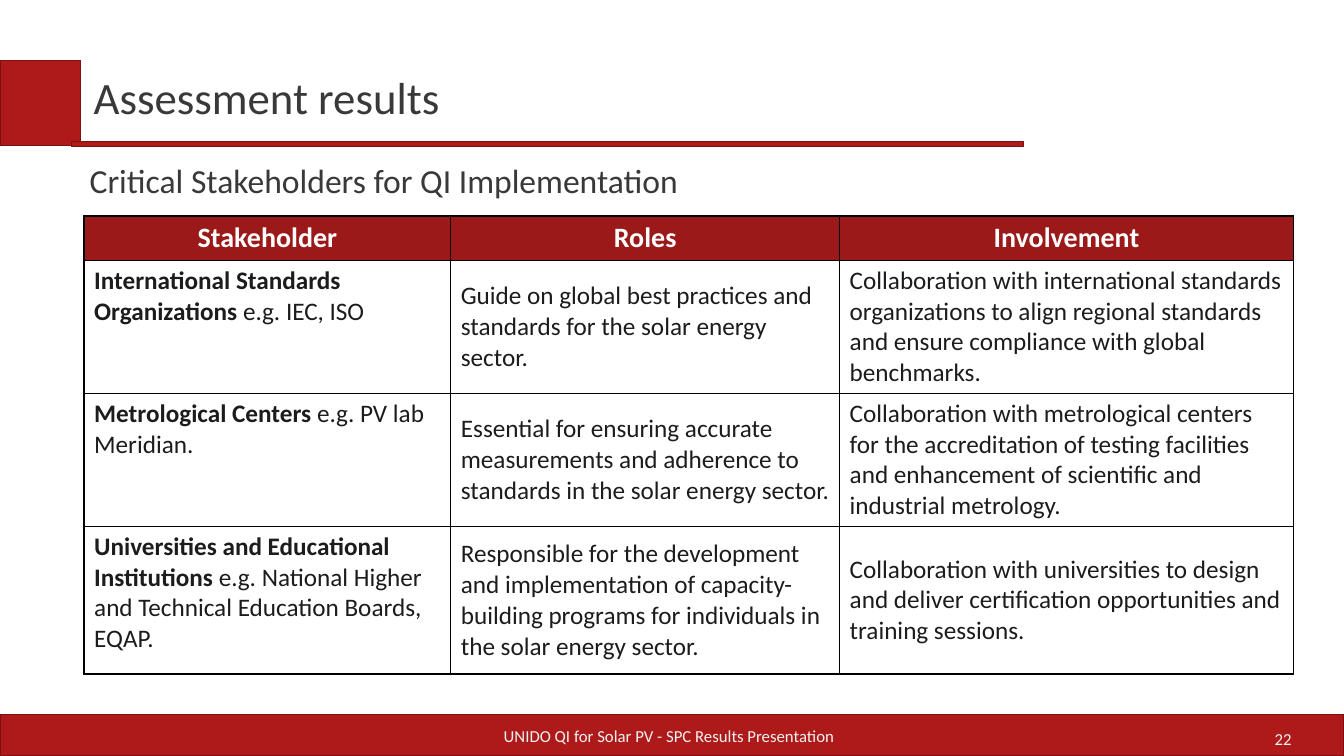
from lxml.etree import SubElement
from pptx import Presentation
from pptx.dml.color import RGBColor
from pptx.enum.shapes import MSO_SHAPE
from pptx.enum.text import MSO_ANCHOR, PP_ALIGN
from pptx.oxml.ns import qn
from pptx.util import Cm, Pt

RED, DARK_RED, HEADER_RED = "AE1919", "7E1212", "9B1919"
INK, GREY, PALE, WHITE, BLACK = "1D1C1C", "3A3838", "F2F2F2", "FFFFFF", "000000"

HEADINGS = ["Stakeholder", "Roles", "Involvement"]
# Stakeholder name, examples, role, involvement
STAKEHOLDERS = [
    ("International Standards Organizations", " e.g. IEC, ISO",
     "Guide on global best practices and standards for the solar energy sector.",
     "Collaboration with international standards organizations to align regional "
     "standards and ensure compliance with global benchmarks."),
    ("Metrological Centers", " e.g. PV lab Meridian.",
     "Essential for ensuring accurate measurements and adherence to standards in "
     "the solar energy sector.",
     "Collaboration with metrological centers for the accreditation of testing "
     "facilities and enhancement of scientific and industrial metrology."),
    ("Universities and Educational Institutions",
     " e.g. National Higher and Technical Education Boards, EQAP.",
     "Responsible for the development and implementation of capacity-building "
     "programs for individuals in the solar energy sector.",
     "Collaboration with universities to design and deliver certification "
     "opportunities and training sessions."),
]
COLUMN_WIDTHS = [9.24, 9.8, 11.43]
ROW_HEIGHTS = [1.12, 3.35, 3.35, 3.73]


def color(value):
    return RGBColor.from_string(value)


class SlideBuilder:
    """Holds the deck's style and the page being drawn; lengths are centimetres."""

    font = "Calibri"

    def __init__(self, page):
        self.page = page

    def style(self, span, size, ink, bold=False):
        span.font.name = self.font
        span.font.size = Pt(size)
        span.font.bold = bold
        span.font.color.rgb = color(ink)

    def bar(self, left, top, width, height):
        shape = self.page.shapes.add_shape(
            MSO_SHAPE.RECTANGLE, Cm(left), Cm(top), Cm(width), Cm(height))
        shape.shadow.inherit = False
        shape.fill.solid()
        shape.fill.fore_color.rgb = color(RED)
        shape.line.color.rgb = color(DARK_RED)
        shape.line.width = Pt(0.85)

    def text(self, words, place, size, ink, align=PP_ALIGN.LEFT,
             anchor=MSO_ANCHOR.MIDDLE, inset=0.25, spacing=None):
        box = self.page.shapes.add_textbox(*(Cm(length) for length in place))
        frame = box.text_frame
        frame.word_wrap = True
        frame.vertical_anchor = anchor
        frame.margin_left = frame.margin_right = Cm(inset)
        frame.margin_top = frame.margin_bottom = Cm(inset)
        frame.text = words
        para = frame.paragraphs[0]
        para.alignment = align
        para.line_spacing = spacing
        self.style(para.runs[0], size, ink)

    def table(self, left, top, widths, heights):
        table = self.page.shapes.add_table(
            len(heights), len(widths), Cm(left), Cm(top),
            Cm(sum(widths)), Cm(sum(heights))).table
        for column, width in zip(table.columns, widths):
            column.width = Cm(width)
        for row, height in zip(table.rows, heights):
            row.height = Cm(height)
        return table

    def borders(self, cell, widths):
        """Draw the left, right, top and bottom edges at the given point widths."""
        properties = cell._tc.get_or_add_tcPr()
        for side, width in zip("LRTB", widths):
            edge = SubElement(properties, qn(f"a:ln{side}"), w=str(Pt(width)))
            fill = SubElement(edge, qn("a:solidFill"))
            SubElement(fill, qn("a:srgbClr"), val=BLACK)

    def cell(self, cell, words, size, ink, bold_first=False, fill=None,
             align=PP_ALIGN.LEFT, anchor=MSO_ANCHOR.MIDDLE):
        if fill:
            cell.fill.solid()
            cell.fill.fore_color.rgb = color(fill)
        else:
            cell.fill.background()
        cell.vertical_anchor = anchor
        para = cell.text_frame.paragraphs[0]
        para.alignment = align
        for index, part in enumerate(words):
            span = para.add_run()
            span.text = part
            self.style(span, size, ink, bold_first and index == 0)


def main():
    deck = Presentation()
    deck.slide_width, deck.slide_height = Cm(33.87), Cm(19.05)
    builder = SlideBuilder(deck.slides.add_slide(deck.slide_layouts[6]))

    builder.bar(0, 18.01, 33.87, 1.02)
    builder.bar(0, 1.52, 2.04, 2.14)
    builder.bar(1.8, 3.57, 23.99, 0.12)
    builder.text("22", (24.82, 18.11, 7.98, 1.02), 12, PALE, PP_ALIGN.RIGHT)
    builder.text("UNIDO QI for Solar PV - SPC Results Presentation",
                 (9.17, 18.03, 15.39, 1.02), 12, PALE, PP_ALIGN.CENTER)

    table = builder.table(2.12, 5.44, COLUMN_WIDTHS, ROW_HEIGHTS)
    last_row = len(ROW_HEIGHTS) - 1
    for row in range(len(ROW_HEIGHTS)):
        for column in range(len(COLUMN_WIDTHS)):
            builder.borders(table.cell(row, column),
                            (1.5 if column == 0 else 1, 1,
                             1.5 if row == 0 else 1,
                             1.5 if row == last_row else 1))
    for column, heading in enumerate(HEADINGS):
        builder.cell(table.cell(0, column), [heading], 20, WHITE, bold_first=True,
                     fill=HEADER_RED, align=PP_ALIGN.CENTER)
    for row, (name, examples, role, involvement) in enumerate(STAKEHOLDERS, 1):
        builder.cell(table.cell(row, 0), [name, examples], 18, INK,
                     bold_first=True, anchor=MSO_ANCHOR.TOP)
        builder.cell(table.cell(row, 1), [role], 18, INK)
        builder.cell(table.cell(row, 2), [involvement], 18, INK)

    builder.text("Critical Stakeholders for QI Implementation",
                 (1.93, 3.71, 21.36, 2.79), 24, GREY,
                 anchor=MSO_ANCHOR.TOP, inset=0.33)
    builder.text("Assessment results", (2.11, 1.57, 21.29, 1.88), 32, GREY,
                 spacing=0.9)
    deck.save("out.pptx")


if __name__ == "__main__":
    main()
